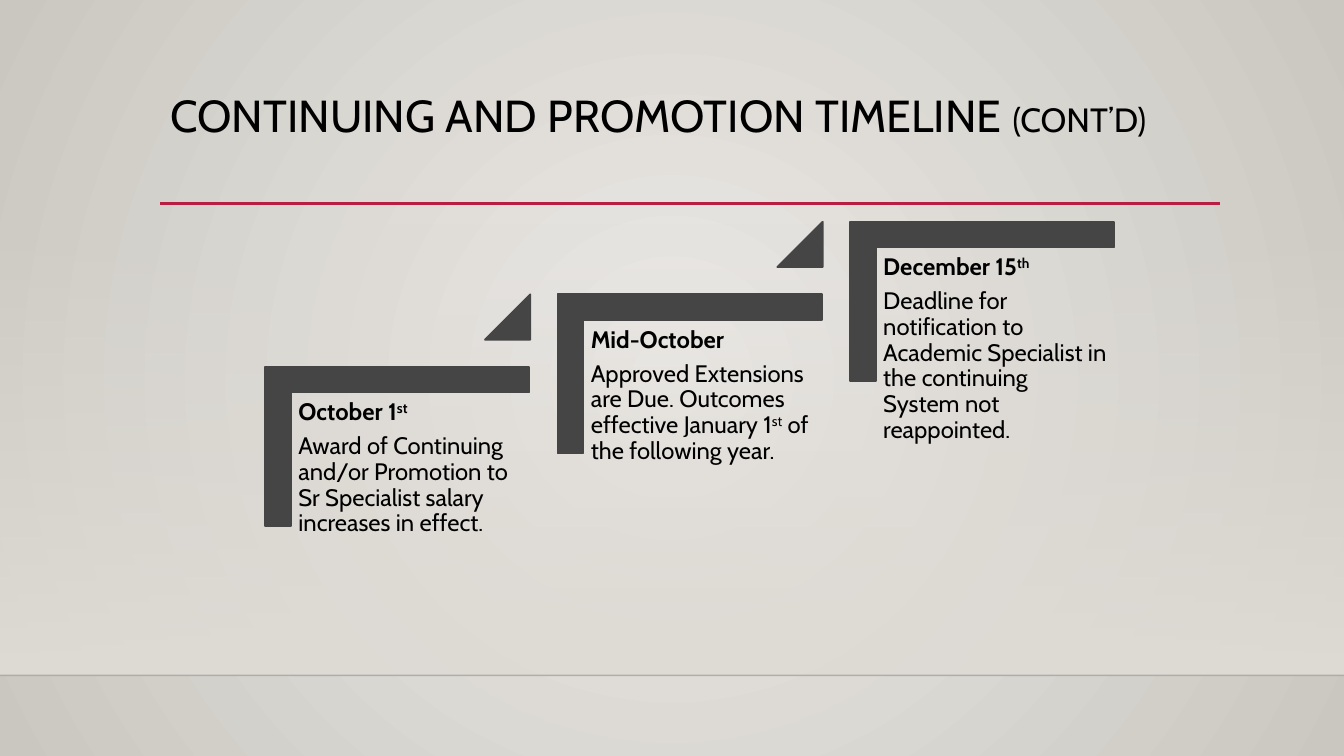
from lxml import etree
from pptx import Presentation
from pptx.dml.color import RGBColor
from pptx.enum.shapes import MSO_CONNECTOR, MSO_SHAPE
from pptx.oxml.ns import qn
from pptx.util import Inches, Pt

STRAIGHT = MSO_CONNECTOR.STRAIGHT
RECTANGLE = MSO_SHAPE.RECTANGLE
CORNER = MSO_SHAPE.CORNER
TRIANGLE = MSO_SHAPE.ISOSCELES_TRIANGLE

BLACK = RGBColor(0x00, 0x00, 0x00)
EDGE = RGBColor(0x00, 0x00, 0x01)
RED = RGBColor(0xB7, 0x1E, 0x42)
CHARCOAL = RGBColor(0x45, 0x45, 0x45)
WALL_LIGHT = RGBColor(0xEC, 0xEA, 0xE7)
WALL_DARK = RGBColor(0xCA, 0xC7, 0xC1)
FLOOR = RGBColor(0xDF, 0xDB, 0xD5)

FONT = "Cabin"
FIRST_LEFT, FIRST_TOP = 2.89, 3.9
STEP_RIGHT, STEP_UP = 2.9, 0.72

STEPS = [
    ([("October 1", False), ("st", True)],
     [("Award of Continuing and/or Promotion to Sr Specialist salary "
       "increases in effect.", False)]),
    ([("Mid-October", False)],
     [("Approved Extensions are Due. Outcomes effective January 1", False),
      ("st", True), (" of the following year.", False)]),
    ([("December 15", False), ("th", True)],
     [("Deadline for notification to Academic Specialist in the continuing "
       "System not reappointed.", False)]),
]


def set_all(obj, values):
    for name, value in values.items():
        setattr(obj, name, value)


def set_stops(fill, colors):
    fill.gradient()
    for stop, color in zip(fill.gradient_stops, colors):
        stop.color.rgb = color


def set_alpha(color_element, percent):
    etree.SubElement(color_element, qn("a:alpha")).set("val", str(percent * 1000))


def paint_background(slide):
    set_stops(slide.background.fill, [WALL_LIGHT, WALL_DARK])
    grad = slide._element.find(".//" + qn("a:gradFill"))
    grad.remove(grad.find(qn("a:lin")))
    radial = etree.SubElement(grad, qn("a:path"))
    radial.set("path", "circle")
    center = etree.SubElement(radial, qn("a:fillToRect"))
    for side in "ltrb":
        center.set(side, "50000")


def add_floor(slide):
    sp = slide.shapes.add_shape(RECTANGLE, 0, Inches(2.21), Inches(13.33), Inches(4.49))
    sp.shadow.inherit = False
    sp.line.fill.background()
    set_stops(sp.fill, [FLOOR, FLOOR])
    sp.fill.gradient_angle = 270
    set_alpha(sp._element.find(".//" + qn("a:srgbClr")), 0)


def add_rule(slide, left, right, y, color, width):
    line = slide.shapes.add_connector(
        STRAIGHT, Inches(left), Inches(y), Inches(right), Inches(y))
    line.line.color.rgb = color
    line.line.width = Pt(width)
    etree.SubElement(line._element.spPr, qn("a:effectLst"))
    return line


def add_text_box(slide, left, top, width, height):
    box = slide.shapes.add_textbox(
        Inches(left), Inches(top), Inches(width), Inches(height))
    box.text_frame.word_wrap = True
    return box.text_frame


def add_run(p, text, size, bold=False, superscript=False):
    r = p.add_run()
    r.text = text
    set_all(r.font, {"name": FONT, "size": Pt(size), "bold": bold})
    r.font.color.rgb = BLACK
    if superscript:
        r._r.get_or_add_rPr().set("baseline", "30000")


def add_title(slide):
    p = add_text_box(slide, 1.59, 0.88, 10.5, 1.15).paragraphs[0]
    p.line_spacing = 0.9
    add_run(p, "CONTINUING AND PROMOTION TIMELINE ", 32)
    add_run(p, "(CONT’D)", 24)


def add_solid(slide, kind, left, top, width, height, adjustments):
    sp = slide.shapes.add_shape(
        kind, Inches(left), Inches(top), Inches(width), Inches(height))
    sp.shadow.inherit = False
    for i, value in enumerate(adjustments):
        sp.adjustments[i] = value
    sp.fill.solid()
    sp.fill.fore_color.rgb = CHARCOAL
    sp.line.color.rgb = CHARCOAL
    sp.line.width = Pt(1.25)
    return sp


def add_step(slide, left, top, heading, detail):
    bracket = add_solid(slide, CORNER, left + 0.26, top - 0.78, 1.58, 2.62, [0.161, 0.161])
    bracket.rotation = 90
    tf = add_text_box(slide, left, top, 2.37, 2.07)
    inset = Inches(0.07)
    set_all(tf, {"margin_left": inset, "margin_top": inset,
                 "margin_right": inset, "margin_bottom": inset})
    for p, runs, bold in ((tf.paragraphs[0], heading, True),
                          (tf.add_paragraph(), detail, False)):
        set_all(p, {"line_spacing": 0.9, "space_after": Pt(6)})
        for text, superscript in runs:
            add_run(p, text, 17, bold, superscript)


def main():
    prs = Presentation()
    prs.slide_width, prs.slide_height = Inches(13.33), Inches(7.5)
    slide = prs.slides.add_slide(prs.slide_layouts[6])
    paint_background(slide)
    add_floor(slide)
    floor_edge = add_rule(slide, 0, 13.33, 6.7, EDGE, 1)
    set_alpha(floor_edge._element.find(".//" + qn("a:srgbClr")), 20)
    add_rule(slide, 1.59, 12.1, 2.02, RED, 2.5)
    add_title(slide)
    for i, (heading, detail) in enumerate(STEPS):
        left, top = FIRST_LEFT + i * STEP_RIGHT, FIRST_TOP - i * STEP_UP
        add_step(slide, left, top, heading, detail)
        if i < len(STEPS) - 1:
            add_solid(slide, TRIANGLE, left + 1.92, top - 0.98, 0.45, 0.45, [1])
    prs.save("out.pptx")


if __name__ == "__main__":
    main()
